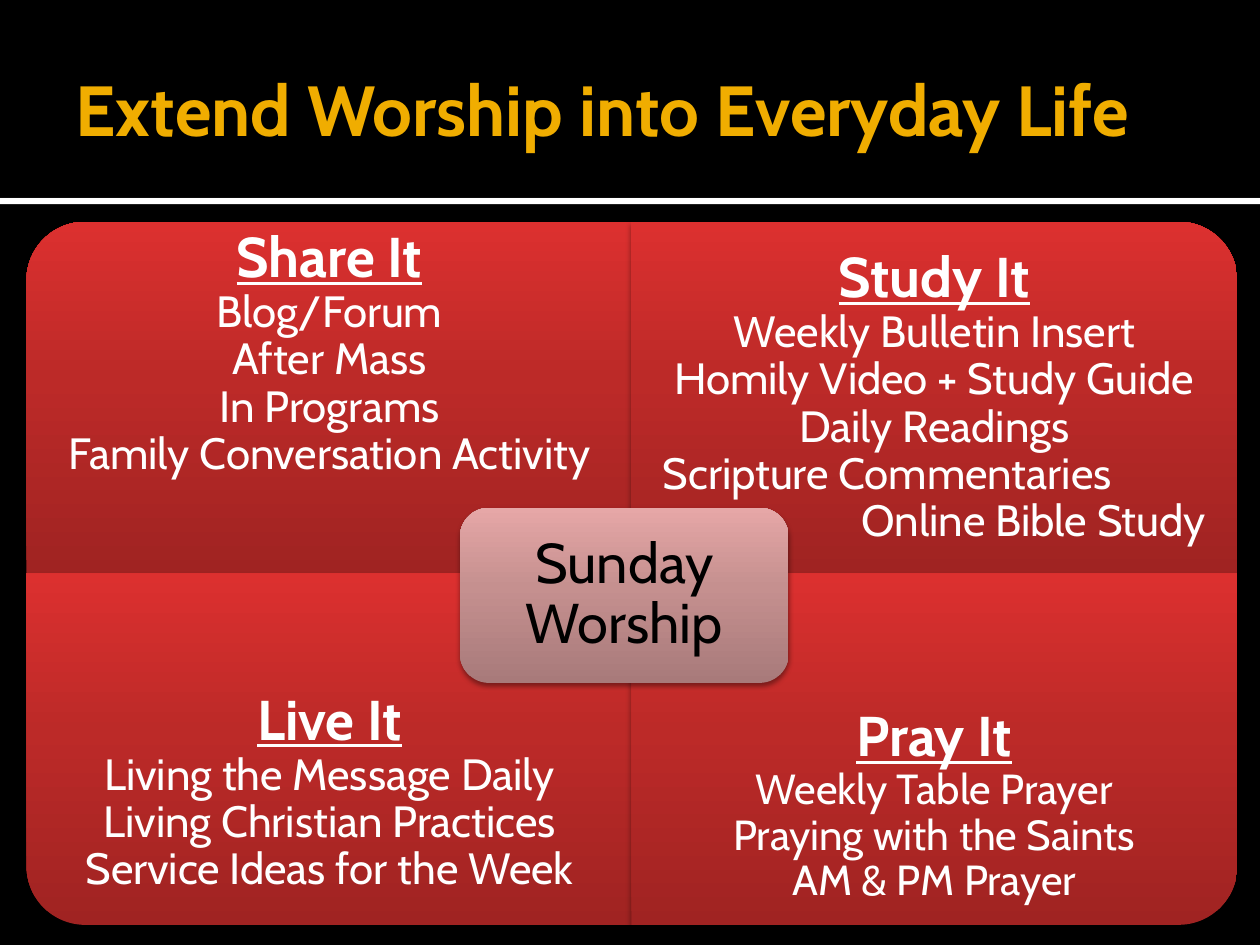
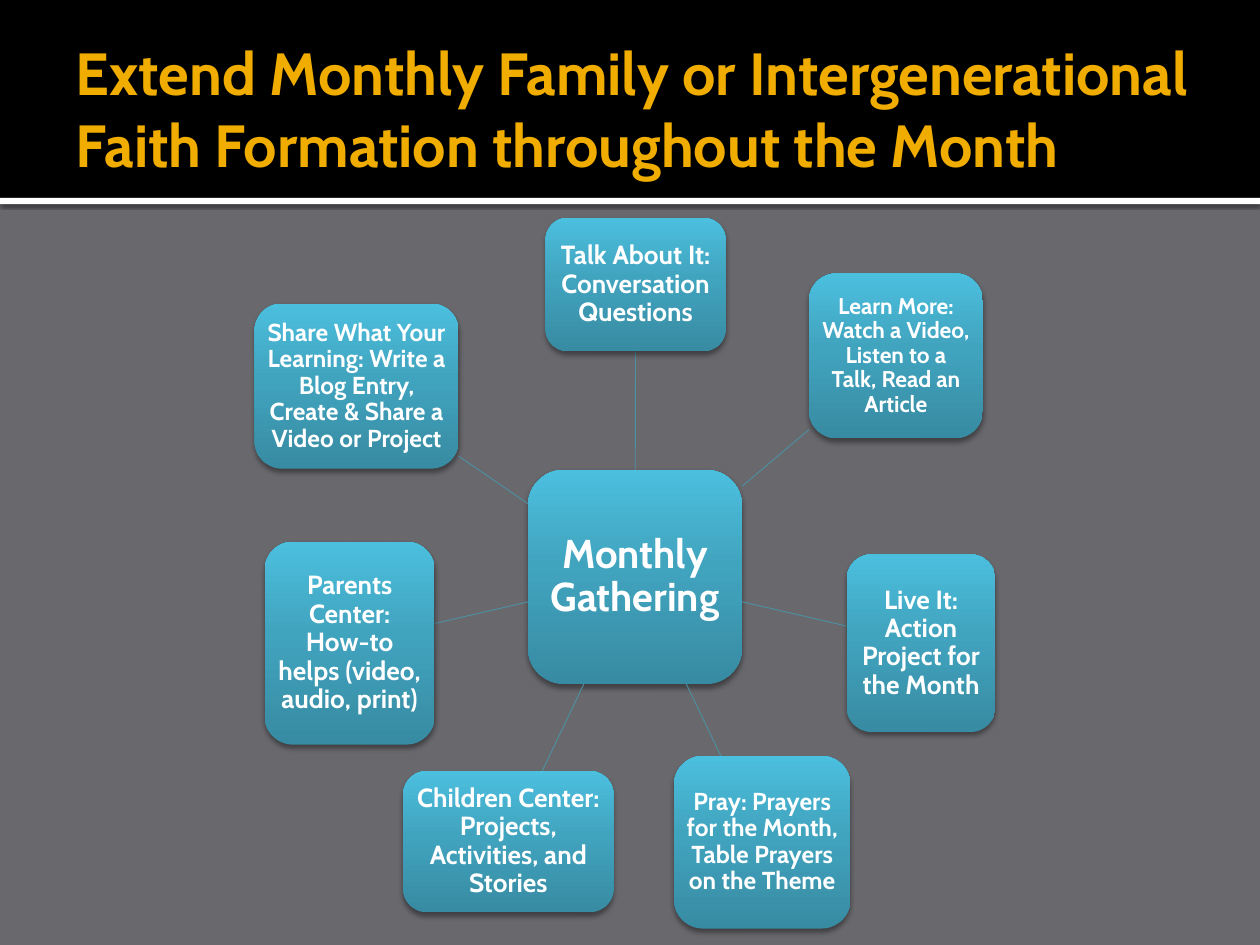
from pptx import Presentation
from pptx.dml.color import RGBColor
from pptx.enum.shapes import MSO_CONNECTOR, MSO_SHAPE
from pptx.enum.text import MSO_ANCHOR, MSO_AUTO_SIZE, PP_ALIGN
from pptx.oxml import parse_xml
from pptx.oxml.ns import nsdecls
from pptx.util import Emu, Pt

PX = 9144
FONT = "Cabin"
COLORS = {
    "black": "000000",
    "white": "FFFFFF",
    "gray": "68686D",
    "gold": "F0AD00",
    "spoke": "4D91A3",
}
GRADIENTS = {
    "red": ("A02322", "BC2A28", "DC302F"),
    "pink": ("A87A7A", "C5908F", "E6A7A7"),
    "teal": ("378BA2", "41A4BF", "4BBFDE"),
}
SOFT_SHADOW = {"alpha": 38, "blur": 3.1, "distance": 2}
BAND_SHADOW = {"alpha": 60, "blur": 2.5, "distance": 0.8}
ALIGNMENTS = {"left": PP_ALIGN.LEFT, "center": PP_ALIGN.CENTER, "right": PP_ALIGN.RIGHT}

WORSHIP_TITLE = "Extend Worship into Everyday Life"
QUADRANTS = [
    {"heading": "Share It", "column": 0, "row": 0, "turn": 270, "text_top": 182, "size": 25,
     "items": [("Blog/Forum", "center"), ("After Mass", "center"), ("In Programs", "center"),
               ("Family Conversation Activity", "center")]},
    {"heading": "Study It", "column": 1, "row": 0, "turn": 0, "text_top": 198, "size": 25,
     "items": [("Weekly Bulletin Insert", "center"), ("Homily Video + Study Guide", "center"),
               ("Daily Readings", "center"), ("Scripture Commentaries", "left"),
               ("Online Bible Study", "right")]},
    {"heading": "Live It", "column": 0, "row": 1, "turn": 180, "text_top": 549, "size": 25,
     "items": [("Living the Message Daily", "center"), ("Living Christian Practices", "center"),
               ("Service Ideas for the Week", "center")]},
    {"heading": "Pray It", "column": 1, "row": 1, "turn": 90, "text_top": 562, "size": 24,
     "items": [("Weekly Table Prayer", "center"), ("Praying with the Saints", "center"),
               ("AM & PM Prayer", "center")]},
]
GRID_LEFT, GRID_TOP, CELL_WIDTH, CELL_HEIGHT = 21, 176, 481, 279
COLUMN_STEP = 480
CELL_PADDING = 25
WORSHIP_CENTER = (365, 403, 261, 139)

MONTH_TITLE = "Extend Monthly Family or Intergenerational Faith Formation throughout the Month"
HUB = (419, 373, 170, 170)
ACTIVITIES = [
    (["Talk About It: Conversation Questions"], (433, 173, 143, 106), 15),
    (["Learn More: Watch a Video, Listen to a Talk, Read an Article"], (642, 217, 138, 131), 13),
    (["Live It: Action Project for the Month"], (672, 440, 118, 141), 15),
    (["Pray: Prayers for the Month, Table Prayers on the Theme"], (535, 600, 140, 137), 14),
    (["Children Center: Projects, Activities, and Stories"], (320, 612, 167, 112), 15),
    (["Parents Center:", "How-to helps (video, audio, print)"], (210, 430, 135, 161), 15),
    (["Share What Your Learning: Write a Blog Entry, Create & Share a Video or Project"],
     (202, 241, 162, 131), 14),
]


def px(*lengths):
    return [Emu(round(length * PX)) for length in lengths]


def rgb(name):
    return RGBColor.from_string(COLORS[name])


def add_text(frame, text, size, color="white", bold=False, underline=False,
             align="center", spacing=0.9):
    para = frame.paragraphs[0]
    if para.runs:
        para = frame.add_paragraph()
    para.alignment = ALIGNMENTS[align]
    para.line_spacing = spacing
    span = para.add_run()
    span.text = text
    span.font.name = FONT
    span.font.size = Pt(size)
    span.font.bold = bold
    span.font.underline = underline
    span.font.color.rgb = rgb(color)


def set_frame(frame, insets, anchor=MSO_ANCHOR.MIDDLE):
    frame.word_wrap = True
    frame.auto_size = MSO_AUTO_SIZE.NONE
    frame.vertical_anchor = anchor
    (frame.margin_left, frame.margin_top,
     frame.margin_right, frame.margin_bottom) = px(*insets)


def add_shadow(shape, alpha, blur, distance):
    shape._element.spPr.append(parse_xml(
        f'<a:effectLst {nsdecls("a")}><a:outerShdw blurRad="{Pt(blur)}" dist="{Pt(distance)}" '
        f'dir="5400000" rotWithShape="0"><a:srgbClr val="{COLORS["black"]}">'
        f'<a:alpha val="{alpha * 1000}"/></a:srgbClr></a:outerShdw></a:effectLst>'))


def add_gradient_shape(page, preset, bounds, gradient, turn=0):
    shape = page.shapes.add_shape(preset, *px(*bounds))
    shape.rotation = turn
    shape.line.fill.background()
    stops = "".join(
        f'<a:gs pos="{position * 1000}"><a:srgbClr val="{color}"/></a:gs>'
        for position, color in zip((0, 55, 100), GRADIENTS[gradient]))
    shape._element.spPr.prstGeom.addnext(parse_xml(
        f'<a:gradFill {nsdecls("a")} rotWithShape="0"><a:gsLst>{stops}</a:gsLst>'
        '<a:lin ang="16200000" scaled="0"/></a:gradFill>'))
    add_shadow(shape, **SOFT_SHADOW)
    return shape


def add_node(page, bounds, gradient, lines, inset, size, **style):
    node = add_gradient_shape(page, MSO_SHAPE.ROUNDED_RECTANGLE, bounds, gradient)
    set_frame(node.text_frame, [inset] * 4)
    for line in lines:
        add_text(node.text_frame, line, size, **style)


def add_bands(page, layout):
    for color, bounds in [("black", (0, 0, 1000, 157)), ("white", (0, 157, 1000, 5))]:
        band = page.shapes.add_shape(MSO_SHAPE.RECTANGLE, *px(*bounds))
        band.fill.solid()
        band.fill.fore_color.rgb = rgb(color)
        band.line.fill.background()
        if color == "white":
            add_shadow(band, **BAND_SHADOW)
        else:
            band.shadow.inherit = False
        layout.shapes._spTree.insert(2, band._element)


def add_page(deck, layout, title, size, width, background):
    page = deck.slides.add_slide(layout)
    page.background.fill.solid()
    page.background.fill.fore_color.rgb = rgb(background)
    box = page.shapes.title
    box.left, box.top, box.width, box.height = px(50, 17, width, 137)
    set_frame(box.text_frame, (10, 5, 5, 5))
    add_text(box.text_frame, title, size, color="gold", bold=True, align="left", spacing=1.0)
    return page


def add_quadrant(page, quadrant):
    left = GRID_LEFT + quadrant["column"] * COLUMN_STEP
    top = GRID_TOP + quadrant["row"] * CELL_HEIGHT
    width, height = CELL_WIDTH, CELL_HEIGHT
    bounds = (left, top, width, height)
    if quadrant["turn"] % 180:
        bounds = (left + (width - height) / 2, top + (height - width) / 2, height, width)
    add_gradient_shape(page, MSO_SHAPE.ROUND_1_RECTANGLE, bounds, "red", quadrant["turn"])
    text_height = top + height - quadrant["text_top"]
    box = page.shapes.add_textbox(*px(left, quadrant["text_top"], width, text_height))
    set_frame(box.text_frame, (CELL_PADDING, 0, CELL_PADDING, 0), MSO_ANCHOR.TOP)
    add_text(box.text_frame, quadrant["heading"], 32, bold=True, underline=True)
    for item, align in quadrant["items"]:
        add_text(box.text_frame, item, quadrant["size"], align=align)


def center(bounds):
    left, top, width, height = bounds
    return left + width / 2, top + height / 2


def edge_toward(bounds, target):
    x, y = center(bounds)
    dx, dy = target[0] - x, target[1] - y
    reach = min(half / abs(step)
                for half, step in ((bounds[2] / 2, dx), (bounds[3] / 2, dy)) if step)
    return x + dx * reach, y + dy * reach


def add_spoke(page, bounds):
    start = edge_toward(HUB, center(bounds))
    end = edge_toward(bounds, center(HUB))
    spoke = page.shapes.add_connector(MSO_CONNECTOR.STRAIGHT, *px(*start, *end))
    spoke.line.color.rgb = rgb("spoke")
    spoke.line.width = Pt(0.5)
    spoke._element.spPr.append(parse_xml(f'<a:effectLst {nsdecls("a")}/>'))


def main():
    deck = Presentation()
    deck.slide_width, deck.slide_height = px(1000, 750)
    layout = deck.slide_layouts[5]

    worship = add_page(deck, layout, WORSHIP_TITLE, 40.5, 900, "black")
    add_bands(worship, layout)
    for quadrant in QUADRANTS:
        add_quadrant(worship, quadrant)
    add_node(worship, WORSHIP_CENTER, "pink", ["Sunday Worship"], 13, 32, color="black")

    month = add_page(deck, layout, MONTH_TITLE, 34, 922, "gray")
    add_node(month, HUB, "teal", ["Monthly Gathering"], 6, 23, bold=True)
    for lines, bounds, size in ACTIVITIES:
        add_spoke(month, bounds)
        add_node(month, bounds, "teal", lines, 3, size, bold=True)

    deck.save("out.pptx")


if __name__ == "__main__":
    main()
